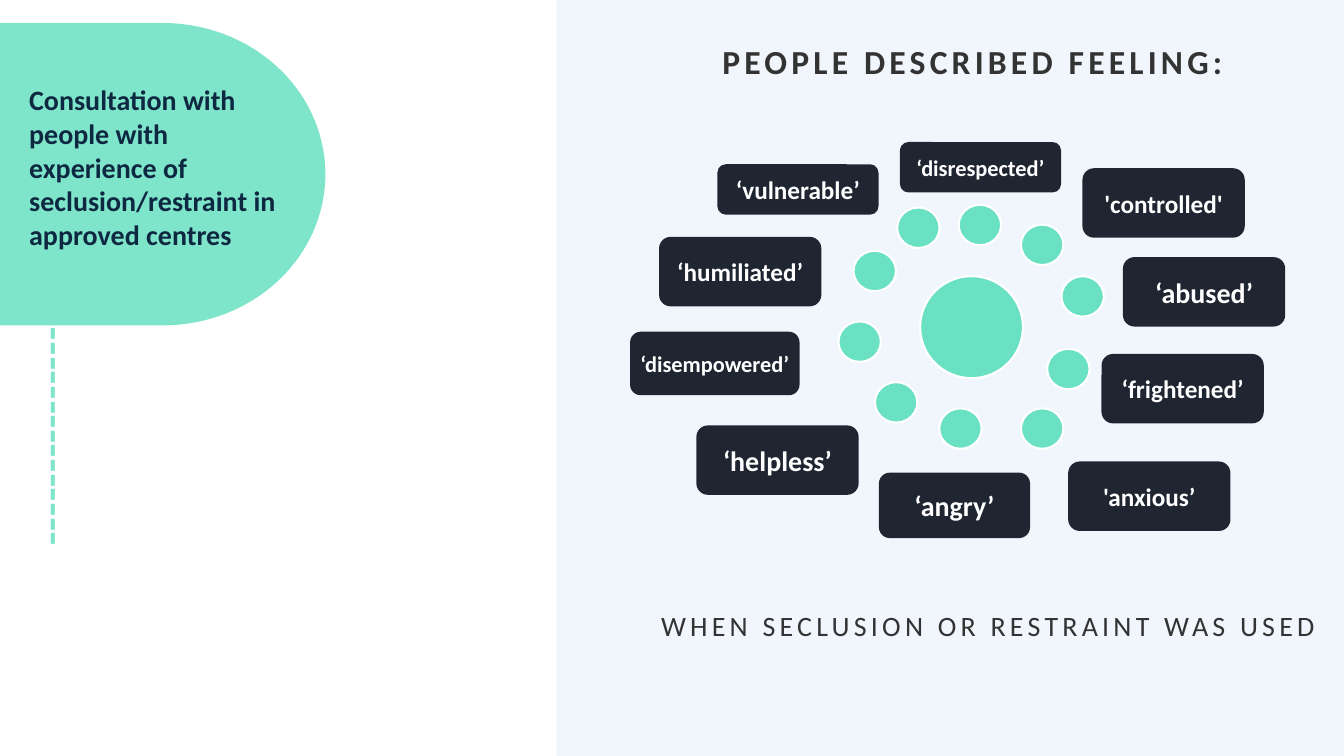
import pptx
import pptx.util
import pptx.dml.color
import pptx.enum.shapes
import pptx.enum.text
import pptx.oxml.ns

Cm = pptx.util.Cm
Pt = pptx.util.Pt
qn = pptx.oxml.ns.qn
Kind = pptx.enum.shapes.MSO_SHAPE
Align = pptx.enum.text.PP_ALIGN
Mid = pptx.enum.text.MSO_ANCHOR.MIDDLE
Top = pptx.enum.text.MSO_ANCHOR.TOP
Fit = pptx.enum.text.MSO_AUTO_SIZE.NONE

MINT, TEAL, NAVY = "7EE5CA", "6AE1C2", "0E2841"
DARK, GREY, SKY, WHITE = "1F2632", "333333", "B8D4F0", "FFFFFF"

WORDS = [
    ("'controlled'", 18, 27.28, 4.24, 4.09, 1.75),
    ("‘abused’", 20, 28.3, 6.48, 4.09, 1.75),
    ("‘frightened’", 18, 27.76, 8.92, 4.09, 1.75),
    ("'anxious’", 18, 26.92, 11.63, 4.09, 1.75),
    ("‘angry’", 20, 22.15, 11.91, 3.81, 1.65),
    ("‘helpless’", 20, 17.55, 10.72, 4.09, 1.75),
    ("‘disempowered’", 16, 15.88, 8.36, 4.27, 1.6),
    ("‘humiliated’", 18, 16.61, 5.97, 4.09, 1.75),
    ("‘vulnerable’", 18, 18.08, 4.14, 4.06, 1.27),
    ("‘disrespected’", 16, 22.68, 3.58, 4.06, 1.27),
]

DOTS = [
    (24.16, 5.16), (25.73, 5.66), (26.75, 6.96), (26.39, 8.79),
    (25.73, 10.29), (23.67, 10.29), (22.05, 9.63), (21.13, 8.1),
    (21.51, 6.32), (22.61, 5.23),
]


def tint(part, code):
    if hasattr(part, "solid"):
        part.solid()
        part = part.fore_color
    part.rgb = pptx.dml.color.RGBColor.from_string(code)


def apply(part, style):
    for name, value in style.items():
        setattr(part, name, value)


class Board:
    font = {"name": "Calibri", "bold": True}

    def __init__(self, deck):
        self.slide = deck.slides.add_slide(deck.slide_layouts[5])
        self.shapes = self.slide.shapes

    def place(self, item, *box):
        names = ("left", "top", "width", "height")
        apply(item, dict(zip(names, map(Cm, box))))

    def letter(self, item, text, size, color, align=Align.CENTER,
               anchor=Top, wrap=True, gap=0, **extra):
        frame = item.text_frame
        frame.text = text
        apply(frame, {"word_wrap": wrap, "auto_size": Fit,
                      "vertical_anchor": anchor})
        line = frame.paragraphs[0]
        line.alignment = align
        font = line.runs[0].font
        apply(font, {**self.font, "size": Pt(size), **extra})
        tint(font.color, color)
        if gap:
            for props in item.element.iter(qn("a:rPr")):
                props.set("spc", str(gap * 100))

    def shape(self, kind, color, *box, edge=None, alpha=None):
        item = self.shapes.add_shape(kind, *map(Cm, box))
        item.shadow.inherit = False
        tint(item.fill, color)
        if alpha:
            for node in item.element.iter(qn("a:srgbClr")):
                fade = {"val": str(alpha * 1000)}
                node.append(node.makeelement(qn("a:alpha"), fade))
        if edge:
            tint(item.line.fill, edge)
            item.line.width = Pt(1.5)
        else:
            item.line.fill.background()
        return item

    def label(self, text, size, color, *box, turn=0, **style):
        item = self.shapes.add_textbox(*map(Cm, box))
        item.rotation = turn
        self.letter(item, text, size, color, **style)

    def title(self, text, size, color, *box):
        item = self.shapes.title
        self.place(item, *box)
        self.letter(item, text, size, color, align=Align.LEFT)
        self.shapes.element.append(item.element)

    def word(self, text, size, *box):
        item = self.shape(Kind.ROUNDED_RECTANGLE, DARK, *box)
        self.letter(item, text, size, WHITE, anchor=Mid, wrap=False)

    def dot(self, *box):
        self.shape(Kind.OVAL, TEAL, *box, edge=WHITE)


def main():
    deck = pptx.Presentation()
    apply(deck, {"slide_width": Cm(33.87), "slide_height": Cm(19.05)})
    board = Board(deck)
    board.label("-" * 21, 28, MINT, -2.44, 8.94, 7.77, 1.45, turn=90,
                align=Align.LEFT, wrap=False, name="Karla")
    board.shape(Kind.FLOWCHART_DELAY, MINT, 0, 0.58, 8.2, 7.62)
    board.shape(Kind.RECTANGLE, SKY, 14.02, 0, 19.85, 19.05, alpha=19)
    board.title("Consultation with people with experience of "
                "seclusion/restraint in approved centres",
                20, NAVY, 0.48, 1.96, 7.24, 4.52)
    board.label("PEOPLE DESCRIBED FEELING:", 24, GREY,
                15.24, 0.91, 18.54, 1.17, gap=3)
    board.dot(23.19, 6.96, 2.59, 2.57)
    for spot in DOTS:
        board.dot(*spot, 1.07, 1.02)
    for row in WORDS:
        board.word(*row)
    board.label("WHEN SECLUSION OR RESTRAINT WAS USED", 20, GREY,
                16, 15.21, 17.8, 1.12, gap=3, bold=False)
    deck.save("out.pptx")


if __name__ == "__main__":
    main()
